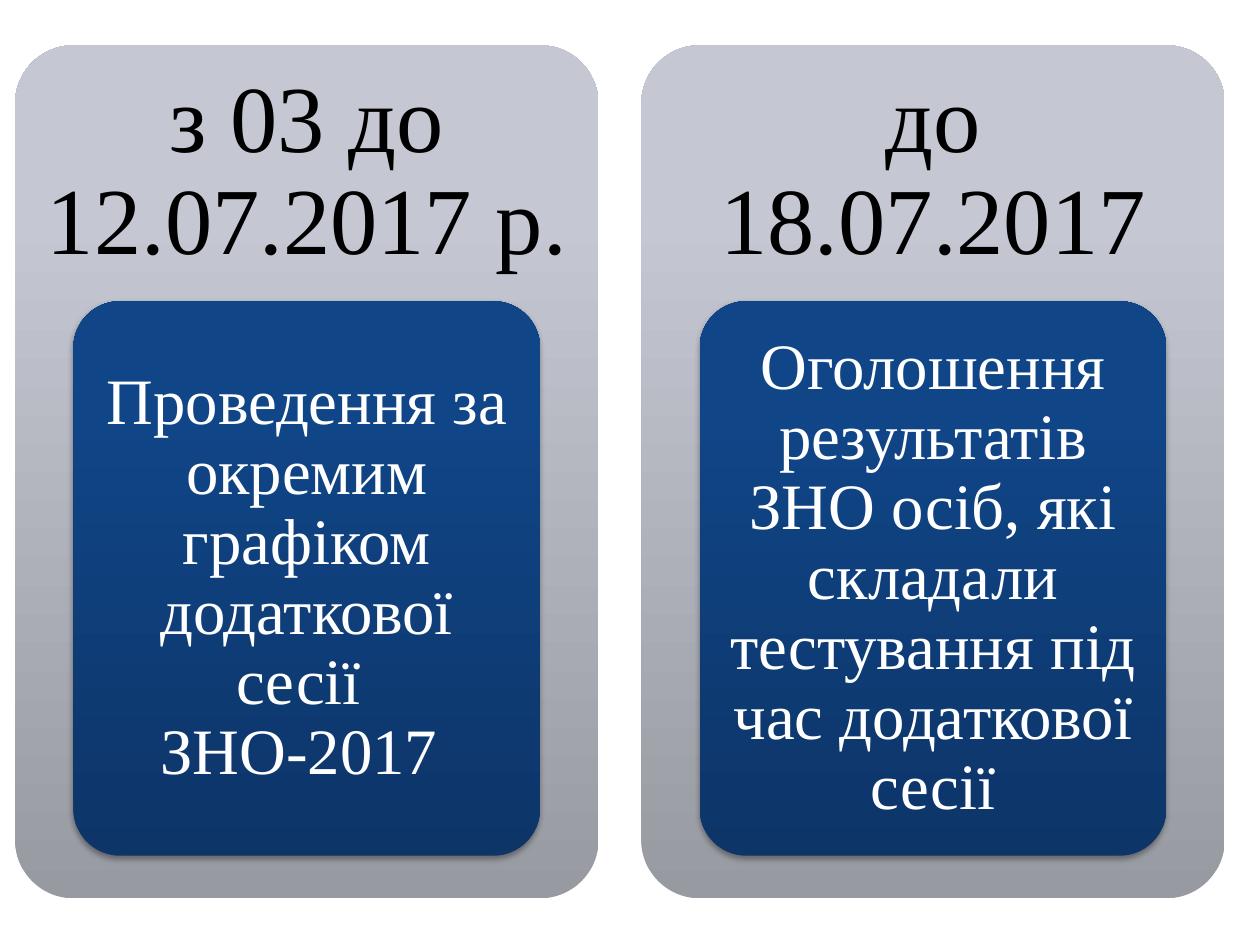
from copy import deepcopy

from lxml import etree
from pptx import Presentation
from pptx.dml.color import RGBColor
from pptx.enum.shapes import MSO_SHAPE
from pptx.enum.text import MSO_ANCHOR, PP_ALIGN
from pptx.oxml import parse_xml
from pptx.oxml.ns import qn
from pptx.util import Inches, Pt

BLACK = RGBColor(0x00, 0x00, 0x00)
WHITE = RGBColor(0xFF, 0xFF, 0xFF)
GREY_STOPS = [(0, RGBColor(0x98, 0x9A, 0xA2)),
              (0.8, RGBColor(0xC5, 0xC8, 0xD2)),
              (1, RGBColor(0xC5, 0xC9, 0xD3))]
BLUE_STOPS = [(0, RGBColor(0x0D, 0x35, 0x68)),
              (0.8, RGBColor(0x10, 0x45, 0x87)),
              (1, RGBColor(0x0E, 0x45, 0x8A))]
FONT = "Times New Roman"

PERIODS = [
    ("з 03 до 12.07.2017 р. ",
     "Проведення за окремим графіком додаткової сесії  ЗНО-2017 "),
    ("до 18.07.2017",
     "Оголошення результатів ЗНО осіб, які складали тестування під час "
     "додаткової сесії"),
]

SHADOW = (
    '<a:outerShdw xmlns:a="http://schemas.openxmlformats.org/drawingml/2006/main" '
    'blurRad="39370" dist="22860" dir="5400000" rotWithShape="0">'
    '<a:srgbClr val="000000"><a:alpha val="35000"/></a:srgbClr></a:outerShdw>'
)


def add_rounded_box(slide, left, top, width, height, stops):
    """Add a rounded box whose gradient runs from bottom to top."""
    box = slide.shapes.add_shape(MSO_SHAPE.ROUNDED_RECTANGLE, left, top, width, height)
    box.adjustments[0] = 0.1
    box.shadow.inherit = False
    box.line.fill.background()
    box.fill.gradient()
    box.fill.gradient_angle = 90
    # A new gradient has two stops; add the third
    stop_list = next(box._element.spPr.iter(qn("a:gsLst")))
    stop_list.append(deepcopy(stop_list[0]))
    for stop, (position, color) in zip(box.fill.gradient_stops, stops):
        stop.position = position
        stop.color.rgb = color
    return box


def add_centred_text(slide, left, top, width, height, text, size, color, margins):
    frame = slide.shapes.add_textbox(left, top, width, height).text_frame
    frame.word_wrap = True
    frame.vertical_anchor = MSO_ANCHOR.MIDDLE
    frame.margin_left = frame.margin_right = margins[0]
    frame.margin_top = frame.margin_bottom = margins[1]
    paragraph = frame.paragraphs[0]
    paragraph.text = text
    paragraph.alignment = PP_ALIGN.CENTER
    paragraph.line_spacing = 0.9
    paragraph.font.name = FONT
    paragraph.font.size = Pt(size)
    paragraph.font.color.rgb = color


def add_period(slide, left, top, width, height, dates, event):
    """Add a grey panel with its dates above a blue event card."""
    # Panel and dates
    add_rounded_box(slide, left, top, width, height, GREY_STOPS)
    add_centred_text(slide, left, top, width, int(height * 0.3), dates, 54, BLACK,
                     (Inches(0.23), Inches(0.23)))

    # Event card
    card_left, card_top = left + int(width * 0.1), top + int(height * 0.3)
    card_width, card_height = int(width * 0.8), int(height * 0.65)
    card = add_rounded_box(slide, card_left, card_top, card_width, card_height, BLUE_STOPS)
    card._element.spPr.find(qn("a:effectLst")).append(parse_xml(SHADOW))
    inset = Inches(0.11)
    add_centred_text(slide, card_left + inset, card_top + inset,
                     card_width - 2 * inset, card_height - 2 * inset,
                     event, 37, WHITE, (Inches(0.1), Inches(0.08)))


def main():
    presentation = Presentation()
    presentation.slide_width, presentation.slide_height = Inches(10), Inches(7.5)
    slide = presentation.slides.add_slide(presentation.slide_layouts[6])

    panel_width, panel_step = Inches(4.63), Inches(4.97)
    for index, (dates, event) in enumerate(PERIODS):
        add_period(slide, Inches(0.12) + index * panel_step, Inches(0.36),
                   panel_width, Inches(6.77), dates, event)

    presentation.save("out.pptx")


if __name__ == "__main__":
    main()
